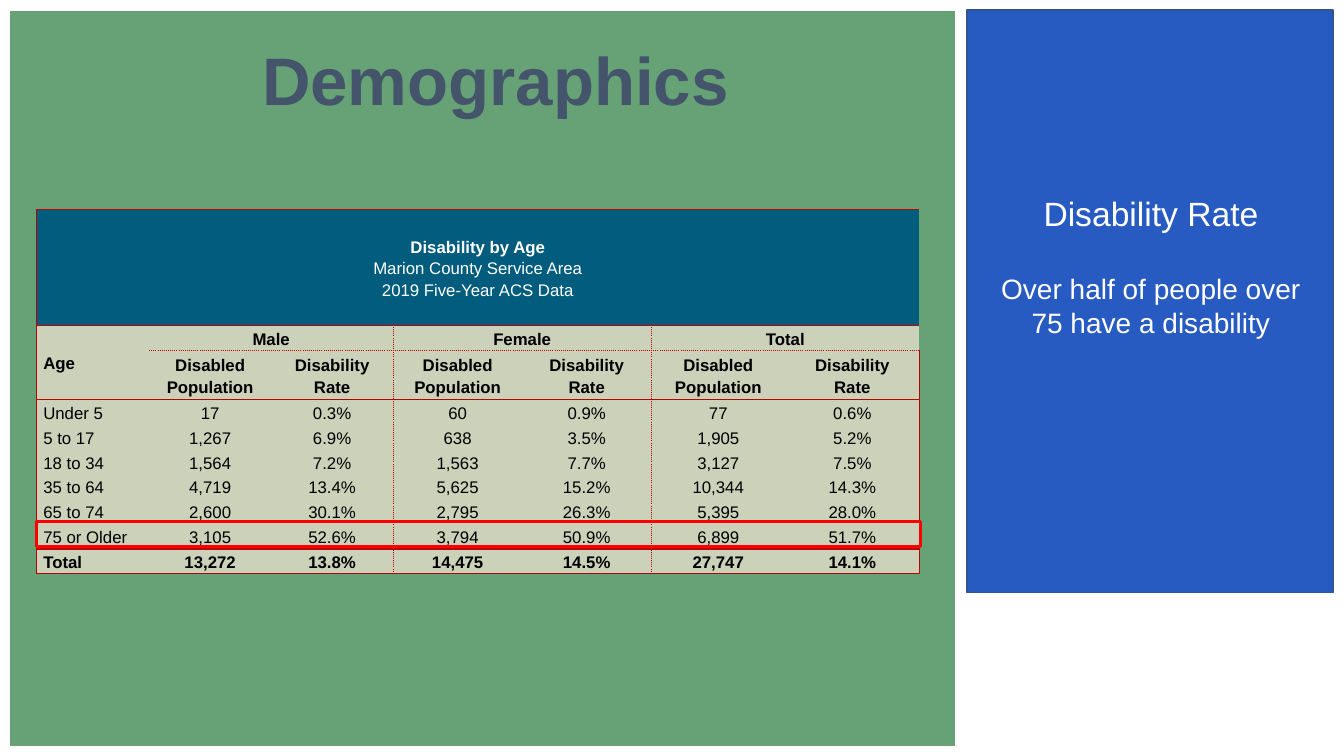
from dataclasses import dataclass

from lxml import etree
from pptx import Presentation
from pptx import util as u
from pptx.dml.color import RGBColor
from pptx.enum import shapes, text
from pptx.oxml.ns import qn


@dataclass(frozen=True)
class Theme:
    font: str = "Arial"
    green: str = "67A176"
    blue: str = "285BC2"
    blue_line: str = "325491"
    slate: str = "44546A"
    teal: str = "025C7E"
    sand: str = "CCD1B9"
    rule: str = "BB0000"
    red: str = "FF0000"
    white: str = "FFFFFF"
    black: str = "000000"
    title: int = 48
    heading: int = 24
    body: int = 20
    table: int = 12


@dataclass(frozen=True)
class Box:
    left: float
    top: float
    width: float
    height: float

    def emu(self) -> list:
        return [u.Inches(v) for v in (self.left, self.top, self.width, self.height)]


@dataclass(frozen=True)
class Panel:
    box: Box
    fill: str | None
    line: str
    weight: float = 1


@dataclass(frozen=True)
class Line:
    words: str
    size: int
    color: str
    bold: bool = False
    fmt: tuple = ()  # extra paragraph settings as (name, value) pairs


@dataclass(frozen=True)
class Edge:
    weight: float
    dash: str = "solid"


T = Theme()
CENTER, LEFT = text.PP_ALIGN.CENTER, text.PP_ALIGN.LEFT
SOLID, DOT, THICK = Edge(1), Edge(1, "sysDot"), Edge(2.25)

PANELS = [
    Panel(Box(0.09, 0.1, 9.39, 7.31), T.green, T.white),
    Panel(Box(9.59, 0.1, 3.63, 5.78), T.blue, T.blue_line),
    Panel(Box(9.62, 6.31, 3.62, 1.1), T.white, T.white),
]
HIGHLIGHT = Panel(Box(0.36, 5.17, 8.77, 0.25), None, T.red, 2.25)

COL_WIDTHS = [1.12, 1.21, 1.21, 1.28, 1.28, 1.33, 1.33]
ROW_HEIGHT = (3.61 - 1.15 - 0.49) / 8
ROW_HEIGHTS = [1.15, ROW_HEIGHT, 0.49] + [ROW_HEIGHT] * 7
ROWS = [
    ["Disability by Age\nMarion County Service Area\n2019 Five-Year ACS Data"] + [""] * 6,
    ["Age", "Male", "", "Female", "", "Total", ""],
    [""] + ["Disabled\nPopulation", "Disability\nRate"] * 3,
    ["Under 5", "17", "0.3%", "60", "0.9%", "77", "0.6%"],
    ["5 to 17", "1,267", "6.9%", "638", "3.5%", "1,905", "5.2%"],
    ["18 to 34", "1,564", "7.2%", "1,563", "7.7%", "3,127", "7.5%"],
    ["35 to 64", "4,719", "13.4%", "5,625", "15.2%", "10,344", "14.3%"],
    ["65 to 74", "2,600", "30.1%", "2,795", "26.3%", "5,395", "28.0%"],
    ["75 or Older", "3,105", "52.6%", "3,794", "50.9%", "6,899", "51.7%"],
    ["Total", "13,272", "13.8%", "14,475", "14.5%", "27,747", "14.1%"],
]
MERGES = [((0, 0), (0, 6)), ((1, 0), (2, 0))] + [((1, c), (1, c + 1)) for c in (1, 3, 5)]
# Rules by the row or column they stand before
ROW_EDGES = {0: SOLID, 1: SOLID, 2: DOT, 3: SOLID, 9: THICK, 10: SOLID}
COL_EDGES = {0: SOLID, 3: DOT, 5: DOT, 7: SOLID}


def apply(obj, values: dict) -> None:
    for name, value in values.items():
        setattr(obj, name, value)


def add_panel(s, panel: Panel) -> None:
    sp = s.shapes.add_shape(shapes.MSO_SHAPE.RECTANGLE, *panel.box.emu())
    sp.shadow.inherit = False
    if panel.fill:
        sp.fill.solid()
        sp.fill.fore_color.rgb = RGBColor.from_string(panel.fill)
    else:
        sp.fill.background()
    sp.line.color.rgb = RGBColor.from_string(panel.line)
    sp.line.width = u.Pt(panel.weight)


def write(tf, lines: list[Line]) -> None:
    for i, line in enumerate(lines):
        p = tf.paragraphs[0] if i == 0 else tf.add_paragraph()
        apply(p, {"alignment": CENTER, **dict(line.fmt)})
        r = p.add_run()
        r.text = line.words
        apply(r.font, {"name": T.font, "size": u.Pt(line.size), "bold": line.bold})
        r.font.color.rgb = RGBColor.from_string(line.color)


def add_text(s, box: Box, lines: list[Line]) -> None:
    tf = s.shapes.add_textbox(*box.emu()).text_frame
    tf.word_wrap = True
    write(tf, lines)


def set_borders(cell, edges: dict[str, Edge | None]) -> None:
    tc_pr = cell._tc.get_or_add_tcPr()
    for side, edge in edges.items():
        ln = etree.SubElement(tc_pr, qn(f"a:ln{side}"))
        if edge is None:
            etree.SubElement(ln, qn("a:noFill"))
            continue
        ln.set("w", str(u.Pt(edge.weight)))
        fill = etree.SubElement(ln, qn("a:solidFill"))
        etree.SubElement(fill, qn("a:srgbClr"), val=T.rule)
        etree.SubElement(ln, qn("a:prstDash"), val=edge.dash)


def cell_edges(row: int, col: int) -> dict[str, Edge | None]:
    cols = COL_EDGES if row else {0: SOLID, 7: SOLID}
    rows = {k: v for k, v in ROW_EDGES.items() if col or k != 2}
    return {"L": cols.get(col), "R": cols.get(col + 1),
            "T": rows.get(row), "B": rows.get(row + 1)}


def add_age_table(s, box: Box) -> None:
    table = s.shapes.add_table(len(ROWS), len(COL_WIDTHS), *box.emu()).table
    apply(table, {"first_row": False, "horz_banding": False})
    for col, width in zip(table.columns, COL_WIDTHS):
        col.width = u.Inches(width)
    for row, height in zip(table.rows, ROW_HEIGHTS):
        row.height = u.Inches(height)
    for first, last in MERGES:
        table.cell(*first).merge(table.cell(*last))
    side = u.Inches(0.07)
    for i, row in enumerate(ROWS):
        for j, words in enumerate(row):
            cell = table.cell(i, j)
            apply(cell, {"margin_left": side, "margin_right": side, "margin_top": 0,
                         "margin_bottom": 0, "vertical_anchor": text.MSO_ANCHOR.MIDDLE})
            set_borders(cell, cell_edges(i, j))
            cell.fill.solid()
            cell.fill.fore_color.rgb = RGBColor.from_string(T.sand if i else T.teal)
            if not words:
                continue
            fmt = (("line_spacing", 1.15), ("alignment", LEFT if i and not j else CENTER))
            write(cell.text_frame, [
                Line(part, T.table, T.black if i else T.white,
                     i in (1, 2, 9) or (i == 0 and k == 0), fmt)
                for k, part in enumerate(words.split("\n"))])


def main() -> None:
    prs = Presentation()
    apply(prs, {"slide_width": u.Inches(13.33), "slide_height": u.Inches(7.5)})
    s = prs.slides.add_slide(prs.slide_layouts[6])

    # Background panels
    for panel in PANELS:
        add_panel(s, panel)

    # Title and side message
    add_text(s, Box(0.28, 0.33, 9.27, 0.9),
             [Line("Demographics", T.title, T.slate, True)])
    add_text(s, Box(9.65, 1.86, 3.53, 1.58), [
        Line("Disability Rate", T.heading, T.white),
        Line("Over half of people over 75 have a disability", T.body, T.white,
             fmt=(("space_before", u.Pt(28)),)),
    ])

    # Table with the oldest age group marked
    add_age_table(s, Box(0.36, 2.08, 8.77, 3.61))
    add_panel(s, HIGHLIGHT)

    prs.save("out.pptx")


if __name__ == "__main__":
    main()
